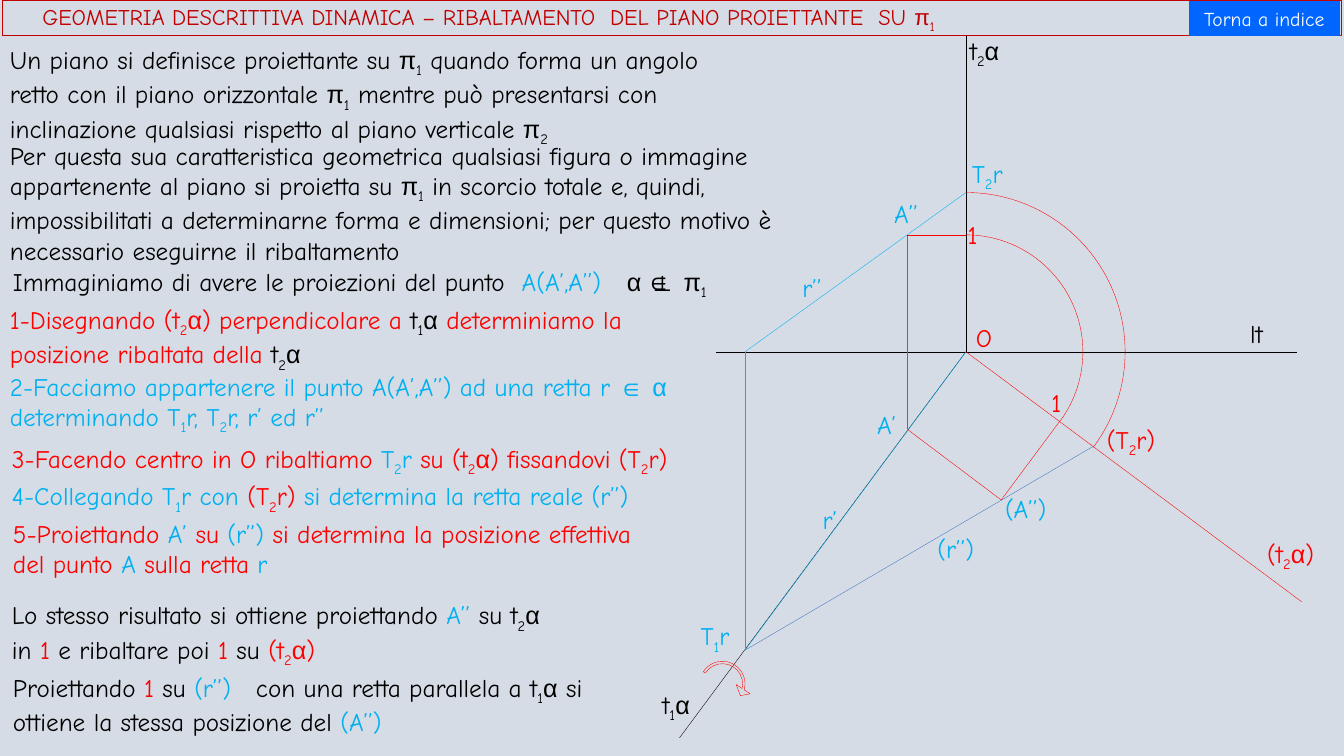
from itertools import groupby

from lxml.etree import SubElement
from pptx import Presentation
from pptx.dml.color import RGBColor
from pptx.enum.shapes import MSO_CONNECTOR, MSO_SHAPE
from pptx.enum.text import MSO_ANCHOR, MSO_AUTO_SIZE, PP_ALIGN
from pptx.oxml.ns import qn
from pptx.util import Inches, Pt

BLACK, RED, BLUE, DARK = "000000", "FF0000", "00B0F0", "4472C4"
INKS = {"k": BLACK, "r": RED, "b": BLUE}


def paint(color, hue):
    color.rgb = RGBColor.from_string(hue)


def split(line, ink):
    """Yield (text, ink, lowered, font): ^k ^r ^b change ink, _ lowers one character."""
    marks, chars, low = iter(line), [], False
    for char in marks:
        if char == "^":
            ink = INKS[next(marks)]
        elif char == "_":
            low = True
        else:
            font = "Arial" if char in "πα⊥∈" else "Comic Neue"
            chars.append((char, ink, low, font))
            low = False
    for style, group in groupby(chars, key=lambda item: item[1:]):
        yield "".join(item[0] for item in group), *style


def write(frame, text, ink=BLACK, size=18, align=PP_ALIGN.LEFT, gap=None, tab=None):
    frame.word_wrap = True
    for i, line in enumerate(text.split("\n")):
        para = frame.add_paragraph() if i else frame.paragraphs[0]
        para.alignment = align
        if gap:
            para.line_spacing = gap
        if tab:
            stops = SubElement(para._p.get_or_add_pPr(), qn("a:tabLst"))
            SubElement(stops, qn("a:tab"), pos=str(Inches(tab)), algn="l")
        for part, hue, low, font in split(line, ink):
            run = para.add_run()
            run.text = part
            run.font.size, run.font.name = Pt(size), font
            paint(run.font.color, hue)
            if low:
                run._r.get_or_add_rPr().set("baseline", "-25000")


def label(slide, text, x, y, w, h=0.4, **form):
    frame = slide.shapes.add_textbox(Inches(x), Inches(y), Inches(w), Inches(h)).text_frame
    frame.auto_size = MSO_AUTO_SIZE.SHAPE_TO_FIT_TEXT
    write(frame, text, **form)


def shape(slide, kind, x, y, w, h, fill=None, line=None, adj=()):
    item = slide.shapes.add_shape(kind, Inches(x), Inches(y), Inches(w), Inches(h))
    item.shadow.inherit = False
    for i, value in enumerate(adj):
        item.adjustments[i] = value
    if fill:
        item.fill.solid()
        paint(item.fill.fore_color, fill)
    else:
        item.fill.background()
    if line:
        paint(item.line.color, line)
        item.line.width = Pt(0.25)
    else:
        item.line.fill.background()
    return item


def stroke(slide, start, end, hue):
    ends = [Inches(value) for value in (*start, *end)]
    line = slide.shapes.add_connector(MSO_CONNECTOR.STRAIGHT, *ends)
    paint(line.line.color, hue)
    line.line.width = Pt(0.25)
    SubElement(line._element.spPr, qn("a:effectLst"))


def head(slide, x, y, w, h):
    bar = shape(slide, MSO_SHAPE.RECTANGLE, x, y, w, h, line="C00000").text_frame
    bar.margin_left = Inches(0.4)
    bar.vertical_anchor = MSO_ANCHOR.MIDDLE
    title = "GEOMETRIA DESCRITTIVA DINAMICA – RIBALTAMENTO  DEL PIANO PROIETTANTE  SU π_1"
    write(bar, title, ink="C00000", size=16, gap=0.9)
    wide = 1.5
    button = shape(slide, MSO_SHAPE.ACTION_BUTTON_CUSTOM, x + w - wide - 0.01, y + 0.01,
                   wide, h, fill="0066FF").text_frame
    button.vertical_anchor = MSO_ANCHOR.MIDDLE
    write(button, "Torna a indice", ink="FFFFFF", size=14, align=PP_ALIGN.CENTER)


def plot(slide, x, y):
    """Draw the projections, with x, y as the top left of the drawing."""
    def at(dx, dy):
        return x + dx, y + dy

    o, one = at(3.18, 3.19), at(4.11, 3.88)
    foot, t1, t2, turned = at(0.99, 3.19), at(0.99, 6.15), at(3.18, 1.61), at(4.44, 4.13)
    low, high, real, side = at(2.6, 3.96), at(2.6, 2.03), at(3.53, 4.66), at(3.18, 2.03)
    for start, end, hue in (
        (at(0.7, 3.19), at(6.46, 3.19), BLACK),
        (at(3.18, 0.06), o, BLACK),
        (o, at(0.34, 7.02), BLACK),
        (o, at(6.51, 5.67), RED),
        (foot, t1, BLUE),
        (foot, t2, BLUE),
        (t1, turned, DARK),
        (o, t1, BLUE),
        (high, low, DARK),
        (low, real, RED),
        (high, side, RED),
        (one, real, RED),
    ):
        stroke(slide, start, end, hue)
    for point, turn in ((t2, 22.18), (side, 21.89)):
        r = o[1] - point[1]
        shape(slide, MSO_SHAPE.ARC, o[0] - r, o[1] - r, 2 * r, 2 * r, line=RED, adj=(162, turn))
    arrow = shape(slide, MSO_SHAPE.CIRCULAR_ARROW, *at(0.47, 6.19), 0.59, 0.59, line=RED,
                  adj=(0.04, 11.42, 205.2, 108, 0.14))
    arrow.rotation = 32.3
    for text, dx, dy, w, ink in (
        ("t_1α", 0.07, 6.49, 0.58, BLACK),
        ("t_2α", 3.12, 0, 0.58, BLACK),
        ("lt", 5.9, 2.81, 0.58, BLACK),
        ("T_1r", 0.45, 5.81, 0.64, BLUE),
        ("T_2r", 3.14, 1.22, 0.64, BLUE),
        ("(T_2r)", 4.48, 3.86, 0.79, RED),
        ("(t_2α)", 6.07, 4.99, 0.79, RED),
        ("(r’’)", 2.8, 4.94, 0.7, BLUE),
        ("r’’", 1.46, 2.35, 0.58, BLUE),
        ("r’", 1.66, 4.65, 0.58, BLUE),
        ("A’’", 2.37, 1.62, 0.58, BLUE),
        ("A’", 2.2, 3.71, 0.58, BLUE),
        ("(A’’)", 3.47, 4.54, 0.67, BLUE),
        ("O", 3.18, 2.85, 0.58, RED),
        ("1", 3.93, 3.49, 0.37, RED),
        ("1", 3.1, 1.83, 0.43, RED),
    ):
        label(slide, text, *at(dx, dy), w, ink=ink)


def notes(slide, x, y):
    """Write the explanation and the steps, with x, y as the top left of the column."""
    for text, dx, dy, w, h, tab in (
        ("Un piano si definisce proiettante su π_1 quando forma un angolo retto con il piano "
         "orizzontale π_1 mentre può presentarsi con inclinazione qualsiasi rispetto al piano "
         "verticale π_2", 0, 0, 7.55, 1.01, None),
        ("Per questa sua caratteristica geometrica qualsiasi figura o immagine appartenente al "
         "piano si proietta su π_1 in scorcio totale e, quindi, impossibilitati a determinarne "
         "forma e dimensioni; per questo motivo è necessario eseguirne il ribaltamento",
         0, 0.95, 7.75, 1.31, None),
        ("Immaginiamo di avere le proiezioni del punto  ^bA(A’,A’’)\t^kα ⊥ π_1",
         0.03, 2.2, 7.52, 0.4, 6.09),
        ("∈", 6.31, 2.19, 0.28, 0.35, None),
        ("^r1-Disegnando (t_2α) perpendicolare a ^kt_1α ^rdeterminiamo la posizione ribaltata "
         "della ^kt_2α", 0, 2.58, 6.93, 0.71, None),
        ("^b2-Facciamo appartenere il punto A(A’,A’’) ad una retta r ∈ α\n"
         "^bdeterminando T_1r, T_2r, r’ ed r’’", 0, 3.24, 7.14, 0.67, None),
        ("^r3-Facendo centro in O ribaltiamo ^bT_2r^r su (t_2α) fissandovi (T_2r)",
         0.02, 3.96, 7.49, 0.4, None),
        ("^b4-Collegando T_1r con ^r(T_2r) ^bsi determina la retta reale (r’’)",
         0.02, 4.33, 7.13, 0.4, None),
        ("^r5-Proiettando ^bA’^r su ^b(r’’) ^rsi determina la posizione effettiva del punto "
         "^bA^r sulla retta ^br", 0.03, 4.7, 6.58, 0.71, None),
        ("Lo stesso risultato si ottiene proiettando ^bA’’ ^ksu t_2α\n"
         "in ^r1^k e ribaltare poi ^r1^k su ^r(t_2α)", 0.02, 5.51, 6.48, 0.71, None),
        ("Proiettando ^r1^k su ^b(r’’)\t^kcon una retta parallela a t_1α si ottiene la stessa "
         "posizione del ^b(A’’)", 0.03, 6.23, 6.28, 0.71, 2.41),
    ):
        label(slide, text, x + dx, y + dy, w, h, tab=tab)


def main():
    deck = Presentation()
    deck.slide_width, deck.slide_height = Inches(13.33), Inches(7.5)
    slide = deck.slides.add_slide(deck.slide_layouts[6])
    slide.background.fill.solid()
    paint(slide.background.fill.fore_color, "D6DCE5")
    head(slide, 0.02, 0, 13.28, 0.35)
    plot(slide, 6.4, 0.3)
    notes(slide, 0, 0.39)
    deck.save("out.pptx")


if __name__ == "__main__":
    main()
